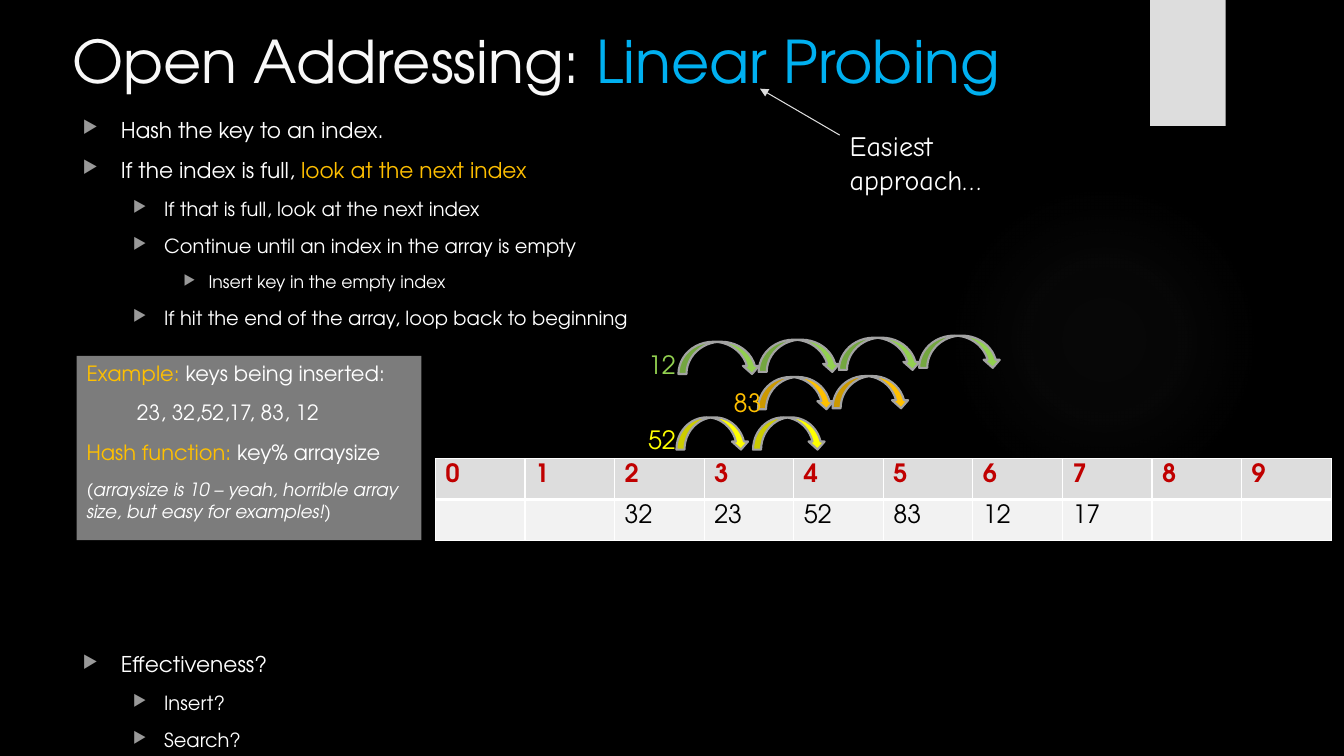
from dataclasses import dataclass

from lxml.etree import SubElement
from pptx import Presentation
from pptx.dml.color import RGBColor
from pptx.enum.shapes import MSO_CONNECTOR, MSO_SHAPE
from pptx.enum.text import MSO_ANCHOR
from pptx.oxml import parse_xml
from pptx.oxml.ns import nsdecls, qn
from pptx.util import Inches, Pt

WIDTH, HEIGHT = Inches(13.333), Inches(7.5)
SANS, COMIC = "TeX Gyre Adventor", "Comic Neue"

BLACK = RGBColor(0x00, 0x00, 0x00)
WHITE = RGBColor(0xFF, 0xFF, 0xFF)
OFF_WHITE = RGBColor(0xF8, 0xF8, 0xF8)
PALE = RGBColor(0xF2, 0xF2, 0xF2)
SILVER = RGBColor(0xDD, 0xDD, 0xDD)
EDGE = RGBColor(0xA3, 0xA3, 0xA3)
BULLET = RGBColor(0x99, 0x99, 0x99)
PANEL = RGBColor(0x7C, 0x7C, 0x7C)
GLOW = RGBColor(0x66, 0x66, 0x66)
BLUE = RGBColor(0x00, 0xB0, 0xF0)
RED = RGBColor(0xC0, 0x00, 0x00)
AMBER = RGBColor(0xFF, 0xC0, 0x00)
YELLOW = RGBColor(0xFF, 0xFF, 0x00)
GREEN = RGBColor(0x92, 0xD0, 0x50)


@dataclass
class Box:
    """Position and size in percent of the slide."""
    left: float
    top: float
    width: float
    height: float

    def emu(self):
        return (across(self.left), down(self.top),
                across(self.width), down(self.height))


def across(share):
    return round(WIDTH * share / 100)


def down(share):
    return round(HEIGHT * share / 100)


def add_span(para, text, size=18, color=WHITE, font=SANS, bold=False, italic=False):
    span = para.add_run()
    span.text = text
    span.font.name = font
    span.font.size = Pt(size)
    span.font.color.rgb = color
    span.font.bold = bold
    span.font.italic = italic


def next_para(frame, space=10):
    if not frame.paragraphs[0].runs:
        return frame.paragraphs[0]
    para = frame.add_paragraph()
    para.space_before = Pt(space)
    return para


def add_frame(page, box, wrap=True, anchor=MSO_ANCHOR.TOP):
    frame = page.shapes.add_textbox(*box.emu()).text_frame
    frame.word_wrap = wrap
    frame.vertical_anchor = anchor
    return frame


def add_figure(page, box, kind, fill, line=None):
    figure = page.shapes.add_shape(kind, *box.emu())
    figure.shadow.inherit = False
    figure.fill.solid()
    figure.fill.fore_color.rgb = fill
    if line is None:
        figure.line.fill.background()
    else:
        figure.line.color.rgb = line
        figure.line.width = Pt(1.5)
    return figure


def add_glow(page, box):
    glow = add_figure(page, box, MSO_SHAPE.OVAL, GLOW)
    properties = glow.fill._xPr
    stops = "".join(
        f'<a:gs pos="{place * 1000}"><a:srgbClr val="{GLOW}">'
        f'<a:alpha val="{alpha * 1000}"/></a:srgbClr></a:gs>'
        for place, alpha in ((0, 7), (36, 6), (69, 0), (100, 0)))
    gradient = parse_xml(
        f'<a:gradFill {nsdecls("a")}><a:gsLst>{stops}</a:gsLst><a:path path="circle">'
        '<a:fillToRect l="50000" t="50000" r="50000" b="50000"/></a:path></a:gradFill>')
    properties.replace(properties.find(qn("a:solidFill")), gradient)


def add_title(page, box):
    para = next_para(add_frame(page, box, anchor=MSO_ANCHOR.MIDDLE))
    add_span(para, "Open Addressing: ", size=42, color=OFF_WHITE)
    add_span(para, "Linear Probing", size=42, color=BLUE)


def add_bullets(page, box, items):
    levels = ((15.5, 0.38, 0.38), (13.9, 0.81, 0.31), (12.4, 1.25, 0.25))
    frame = add_frame(page, box)
    for level, *spans in items:
        size, margin, hanging = levels[level]
        para = next_para(frame)
        para.level = level
        properties = para._p.get_or_add_pPr()
        properties.set("marL", str(Inches(margin)))
        properties.set("indent", str(-Inches(hanging)))
        color = SubElement(properties, qn("a:buClr"))
        SubElement(color, qn("a:srgbClr"), val=str(BULLET))
        SubElement(properties, qn("a:buSzPct"), val="80000")
        SubElement(properties, qn("a:buChar"), char="▶")
        for text, color in spans:
            add_span(para, text, size=size, color=color)


def add_example(page, box):
    frame = add_figure(page, box, MSO_SHAPE.RECTANGLE, PANEL).text_frame
    frame.word_wrap = True
    frame.vertical_anchor = MSO_ANCHOR.TOP
    lines = (
        (0, 15, False, ("Example: ", AMBER), ("keys being inserted:", WHITE)),
        (0.5, 15, False, ("23, 32,52,17, 83, 12", WHITE)),
        (0, 15, False, ("Hash function: ", AMBER), ("key% arraysize", WHITE)),
        (0, 13, True, ("(arraysize is 10 – yeah, horrible array size, "
                       "but easy for examples!)", WHITE)),
    )
    for margin, size, italic, *spans in lines:
        para = next_para(frame)
        para.alignment = 1
        para._p.get_or_add_pPr().set("marL", str(Inches(margin)))
        for text, color in spans:
            add_span(para, text, size=size, color=color, italic=italic)


def add_borders(cell, bottom):
    properties = cell._tc.get_or_add_tcPr()
    for place, (side, width) in enumerate(zip("LRTB", (1, 1, 1, bottom))):
        properties.insert(place, parse_xml(
            f'<a:ln{side} {nsdecls("a")} w="{Pt(width)}"><a:solidFill>'
            f'<a:srgbClr val="{WHITE}"/></a:solidFill></a:ln{side}>'))


def add_hash_table(page, box, keys):
    rows = (([str(index) for index in range(len(keys))], SILVER, RED, True, 3),
            (keys, PALE, BLACK, False, 1))
    table = page.shapes.add_table(len(rows), len(keys), *box.emu()).table
    for row, (texts, fill, color, bold, bottom) in enumerate(rows):
        for column, text in enumerate(texts):
            cell = table.cell(row, column)
            cell.fill.solid()
            cell.fill.fore_color.rgb = fill
            add_borders(cell, bottom)
            if text:
                add_span(cell.text_frame.paragraphs[0], text, color=color, bold=bold)


def add_probes(page, box, key, color, hops, step, rise, shift, drop):
    for hop in range(hops):
        arc = Box(box.left + hop * step, box.top - hop * rise, box.width, box.height)
        add_figure(page, arc, MSO_SHAPE.CURVED_DOWN_ARROW, color, line=EDGE)
    label = Box(box.left - shift, box.top + drop, 3.6, 5.33)
    add_span(next_para(add_frame(page, label, wrap=False)), key, color=color)


def add_callout(page, box):
    add_span(next_para(add_frame(page, box)), "Easiest approach…", size=20, font=COMIC)
    arrow = page.shapes.add_connector(
        MSO_CONNECTOR.STRAIGHT, across(box.left), down(box.top + 1.47),
        across(box.left - 5.93), down(box.top - 4.67))
    arrow.line.color.rgb = SILVER
    arrow.line.width = Pt(0.75)
    SubElement(arrow.line._get_or_add_ln(), qn("a:tailEnd"), type="triangle")
    SubElement(arrow._element.spPr, qn("a:effectLst"))


def main():
    deck = Presentation()
    deck.slide_width, deck.slide_height = WIDTH, HEIGHT
    page = deck.slides.add_slide(deck.slide_layouts[6])
    page.background.fill.solid()
    page.background.fill.fore_color.rgb = BLACK

    add_glow(page, Box(70.58, 24.4, 23.1, 41.07))
    add_figure(page, Box(85.58, 0, 5.62, 16.67), MSO_SHAPE.RECTANGLE, SILVER)
    add_title(page, Box(4.65, 2.27, 82.35, 11.33))
    add_hash_table(page, Box(32.4, 60.67, 66.67, 10.8),
                   ["", "", "32", "23", "52", "83", "12", "17", "", ""])
    add_probes(page, Box(50.33, 55.2, 5.4, 4.27), "52", YELLOW, 2, 5.7, 0, 2.85, 0.27)
    add_probes(page, Box(56.4, 49.87, 5.7, 4.27), "83", AMBER, 2, 5.55, 0.13, 2.55, 0.66)
    add_probes(page, Box(50.48, 45.2, 6.08, 4.27), "12", GREEN, 4, 5.97, 0.27, 3, 0.4)
    add_bullets(page, Box(5.4, 14.8, 47.33, 30.67), (
        (0, ("Hash the key to an index.", WHITE)),
        (0, ("If the index is full, ", WHITE), ("look at the next index", AMBER)),
        (1, ("If that is full, look at the next index", WHITE)),
        (1, ("Continue until an index in the array is empty", WHITE)),
        (2, ("Insert key in the empty index", WHITE)),
        (1, ("If hit the end of the array, loop back to beginning", WHITE))))
    add_bullets(page, Box(5.4, 85.47, 47.33, 14.53), (
        (0, ("Effectiveness?", WHITE)),
        (1, ("Insert?", WHITE)),
        (1, ("Search?", WHITE))))
    add_example(page, Box(5.7, 47.07, 25.65, 24.4))
    add_callout(page, Box(62.48, 16.4, 14.55, 10.27))
    deck.save("out.pptx")


if __name__ == "__main__":
    main()
